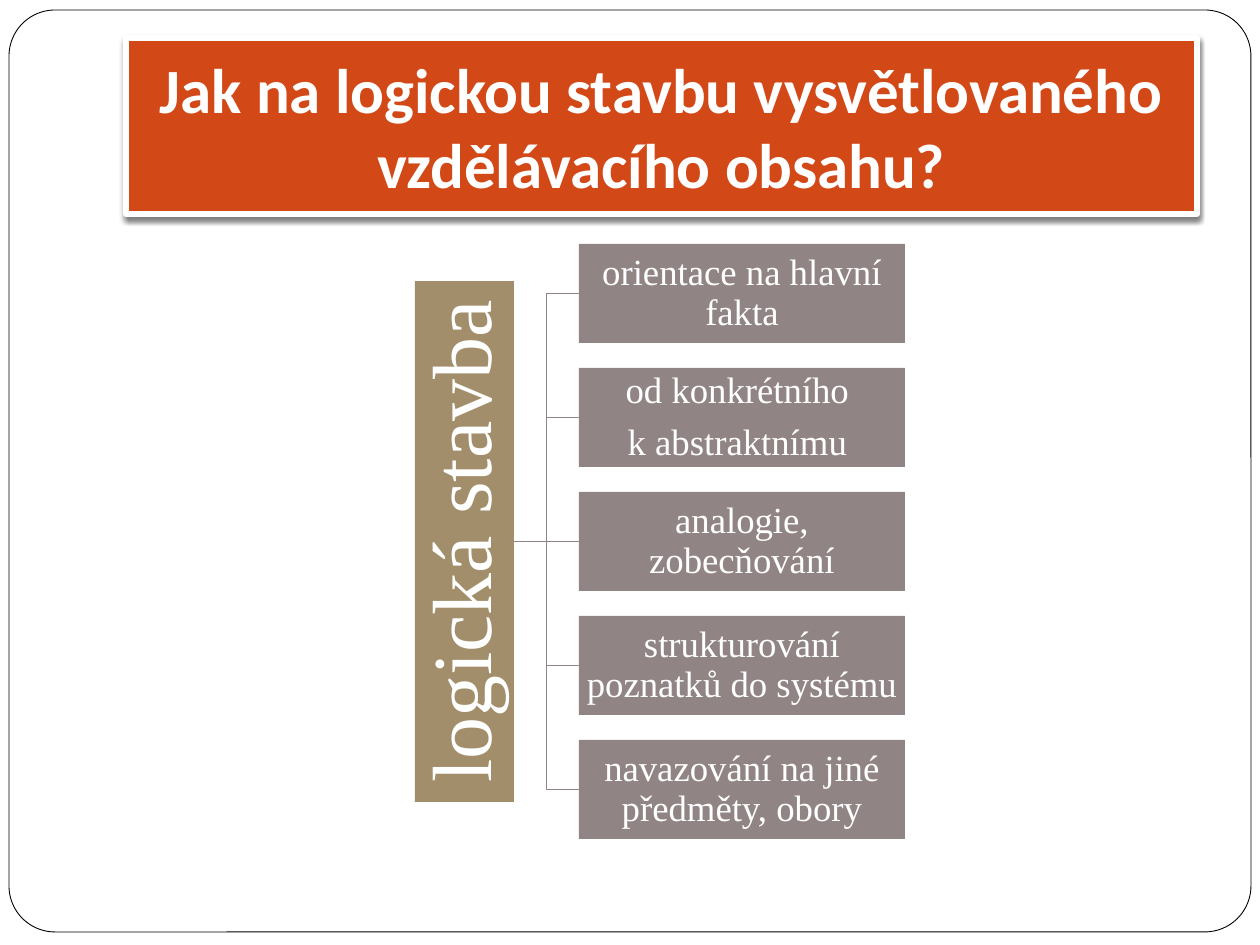
from dataclasses import dataclass

from lxml import etree
from pptx import Presentation, util as u
from pptx.dml.color import RGBColor
from pptx.enum import shapes, text
from pptx.oxml import parse_xml
from pptx.oxml.ns import nsdecls, qn

TITLE = "Jak na logickou stavbu vysvětlovaného vzdělávacího obsahu?"
ROOT = ["logická stavba"]
BRANCHES = [
    ["orientace na hlavní fakta"],
    ["od konkrétního ", "k abstraktnímu "],
    ["analogie, zobecňování"],
    ["strukturování poznatků do systému"],
    ["navazování na jiné předměty, obory"],
]

# Lengths in px, 126 to the inch
PAGE = (1260, 945)
FRAME = (9, 10, 1242, 922)
TITLE_AREA = (126, 38, 1071, 176)
ROOT_AREA = (415, 281, 99, 521)
BRANCH_AREA = (579, 244, 326, 99)
BRANCH_STEP = 124
RIGHT_SIDE, LEFT_SIDE = 3, 1


@dataclass(frozen=True)
class Theme:
    white: str = "FFFFFF"
    black: str = "000000"
    title_fill: str = "D34817"
    root_fill: str = "A28E6A"
    branch_fill: str = "918485"
    title_font: str = "Calibri"
    body_font: str = "Times New Roman"
    title_size: int = 36
    root_size: int = 48
    branch_size: int = 21


THEME = Theme()


def px(length):
    return u.Emu(round(length * 914400 / 126))


def paint(shape, fill, line=None, width=0):
    shape.fill.solid()
    shape.fill.fore_color.rgb = RGBColor.from_string(fill)
    if line:
        shape.line.color.rgb = RGBColor.from_string(line)
        shape.line.width = u.Pt(width)
    else:
        shape.line.fill.background()


def set_insets(frame, left, top, right, bottom):
    frame.margin_left, frame.margin_top = u.Inches(left), u.Inches(top)
    frame.margin_right, frame.margin_bottom = u.Inches(right), u.Inches(bottom)


def add_span(para, words, font, size, bold=False):
    para.alignment = text.PP_ALIGN.CENTER
    span = para.add_run()
    span.text = words
    span.font.name = font
    span.font.size = u.Pt(size)
    span.font.bold = bold
    span.font.color.rgb = RGBColor.from_string(THEME.white)


def add_frame(page):
    """Put the rounded page border behind everything else."""
    border = page.shapes.add_shape(
        shapes.MSO_SHAPE.ROUNDED_RECTANGLE, *map(px, FRAME))
    border.adjustments[0] = 0.05
    border.shadow.inherit = False
    paint(border, THEME.white, THEME.black, 0.5)
    page.shapes.title.element.addprevious(border.element)


def fill_title(title):
    title.left, title.top, title.width, title.height = map(px, TITLE_AREA)
    paint(title, THEME.title_fill, THEME.white, 3)
    title.element.spPr.append(parse_xml(
        f'<a:effectLst {nsdecls("a")}>'
        '<a:outerShdw blurRad="38100" dist="25400" dir="5400000" rotWithShape="0">'
        f'<a:srgbClr val="{THEME.black}"><a:alpha val="50000"/></a:srgbClr>'
        '</a:outerShdw></a:effectLst>'))
    frame = title.text_frame
    frame.word_wrap = True
    frame.auto_size = text.MSO_AUTO_SIZE.NONE
    frame.vertical_anchor = text.MSO_ANCHOR.BOTTOM
    set_insets(frame, 0.1, 0.05, 0.1, 0.1)
    add_span(frame.paragraphs[0], TITLE, THEME.title_font, THEME.title_size, True)


def add_box(page, area, lines, fill, size, inset):
    box = page.shapes.add_shape(shapes.MSO_SHAPE.RECTANGLE, *map(px, area))
    box.shadow.inherit = False
    paint(box, fill)
    frame = box.text_frame
    frame.word_wrap = True
    frame.vertical_anchor = text.MSO_ANCHOR.MIDDLE
    set_insets(frame, *[inset] * 4)
    for index, words in enumerate(lines):
        para = frame.add_paragraph() if index else frame.paragraphs[0]
        para.line_spacing = 0.9
        para.space_after = u.Pt(0.35 * size)
        add_span(para, words, THEME.body_font, size)
    return box


def join(page, root, branch, kind):
    link = page.shapes.add_connector(kind, 0, 0, 0, 0)
    link.begin_connect(root, RIGHT_SIDE)
    link.end_connect(branch, LEFT_SIDE)
    link.line.color.rgb = RGBColor.from_string(THEME.branch_fill)
    link.line.width = u.Pt(1)
    etree.SubElement(link.element.spPr, qn("a:effectLst"))


def add_tree(page):
    root = add_box(page, ROOT_AREA, ROOT, THEME.root_fill, THEME.root_size, 0.03)
    root.text_frame._txBody.bodyPr.set("vert", "vert270")
    left, top, width, height = BRANCH_AREA
    middle = len(BRANCHES) // 2
    for index, lines in enumerate(BRANCHES):
        area = (left, top + index * BRANCH_STEP, width, height)
        branch = add_box(page, area, lines, THEME.branch_fill,
                         THEME.branch_size, 0.01)
        kind = (shapes.MSO_CONNECTOR.STRAIGHT if index == middle
                else shapes.MSO_CONNECTOR.ELBOW)
        join(page, root, branch, kind)


def main():
    deck = Presentation()
    deck.slide_width, deck.slide_height = map(px, PAGE)
    page = deck.slides.add_slide(deck.slide_layouts.get_by_name("Title Only"))
    add_frame(page)
    fill_title(page.shapes.title)
    add_tree(page)
    deck.save("out.pptx")


if __name__ == "__main__":
    main()
